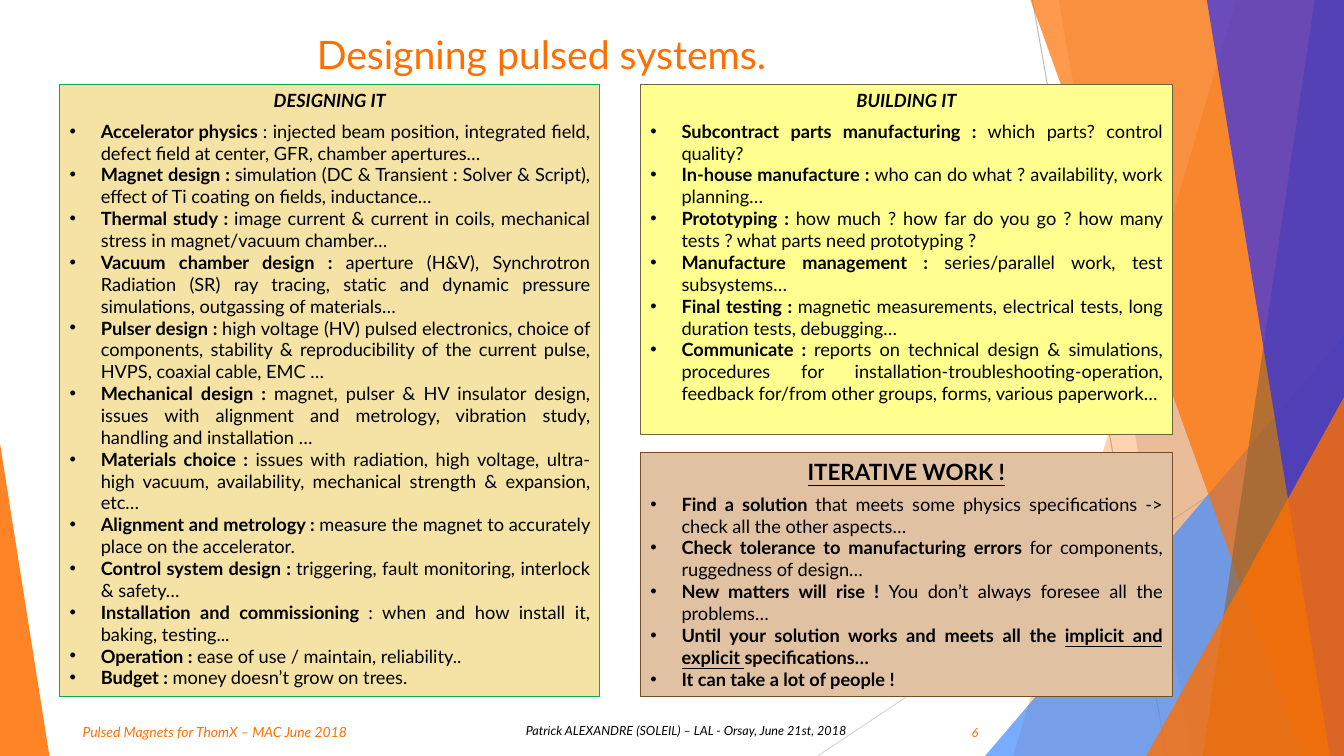
from lxml.etree import SubElement
from pptx import Presentation
from pptx.dml.color import RGBColor
from pptx.enum.shapes import MSO_CONNECTOR
from pptx.enum.text import MSO_ANCHOR as Anchor, MSO_AUTO_SIZE as AutoSize, PP_ALIGN as Align
from pptx.oxml.ns import qn
from pptx.util import Inches, Pt

ORANGE, BROWN, BLUE, INDIGO, BLACK = "FF6F00", "996633", "438CFF", "1F29FD", "000000"
WIDTH, HEIGHT = 13.33, 7.5
INDENT = Inches(0.31)


def color(value):
    return RGBColor.from_string(value)


def style(paragraph, size, font_color, align, **flags):
    paragraph.alignment = align
    paragraph.space_before = Pt(0)
    font = paragraph.font
    font.name, font.size, font.color.rgb = "Lato", Pt(size), color(font_color)
    for name, value in flags.items():
        setattr(font, name, value)


presentation = Presentation()
presentation.slide_width, presentation.slide_height = Inches(WIDTH), Inches(HEIGHT)
slide = presentation.slides.add_slide(presentation.slide_layouts.get_by_name("Comparison"))
shapes = slide.shapes
placeholders = list(slide.placeholders)

# Thin background lines
for x1, y1, x2, y2, line_color in [
    (8.11, HEIGHT, 13.32, 4.03, "D9D9D9"),
    (10.24, 0, 11.57, HEIGHT, "BFBFBF"),
]:
    line = shapes.add_connector(MSO_CONNECTOR.STRAIGHT, *map(Inches, (x1, y1, x2, y2)))
    line.line.color.rgb, line.line.width = color(line_color), Pt(0.75)
    SubElement(line.element.spPr, qn("a:effectLst"))

# Translucent facets: colour, opacity in percent, corners
top_right, bottom_right = (WIDTH, 0), (WIDTH, HEIGHT)
facets = [
    (ORANGE, 30, [(12.26, 0), (10.05, HEIGHT), bottom_right, top_right]),
    (BROWN, 20, [(10.5, 0), (11.82, HEIGHT), bottom_right, top_right]),
    (BLUE, 72, [(9.77, HEIGHT), (WIDTH, 3.33), bottom_right]),
    (ORANGE, 70, [(10.22, 0), (12.92, HEIGHT), bottom_right, top_right]),
    (BROWN, 70, [(13.04, 0), (11.93, HEIGHT), bottom_right, top_right]),
    (INDIGO, 65, [(11.97, 0), (13.19, HEIGHT), bottom_right, top_right]),
    (ORANGE, 80, [(11.37, HEIGHT), (WIDTH, 3.94), bottom_right]),
    (ORANGE, 85, [(0, 4.4), (0.49, HEIGHT), (0, HEIGHT)]),
]
for fill_color, opacity, corners in facets:
    points = [(Inches(x), Inches(y)) for x, y in corners]
    builder = shapes.build_freeform(*points[0])
    builder.add_line_segments(points[1:], close=True)
    facet = builder.convert_to_shape()
    facet.shadow.inherit = False
    facet.line.fill.background()
    facet.fill.solid()
    facet.fill.fore_color.rgb = color(fill_color)
    fill_element = facet.element.spPr.find(qn("a:solidFill")).find(qn("a:srgbClr"))
    SubElement(fill_element, qn("a:alpha"), val=str(opacity * 1000))

# Bring the placeholders in front of the background, drop the spare one
for placeholder in placeholders:
    shapes.element.append(placeholder.element)
title, *bodies, spare = placeholders
shapes.element.remove(spare.element)

# Footer
for text, left, top, width, height, size, text_color, align, anchor in [
    ("Pulsed Magnets for ThomX – MAC June 2018",
     0.72, 7.13, 3.32, 0.27, 10, ORANGE, Align.LEFT, Anchor.TOP),
    ("Patrick ALEXANDRE (SOLEIL) – LAL - Orsay, June 21st, 2018",
     4.68, 7.12, 3.81, 0.25, 9, BLACK, Align.RIGHT, Anchor.TOP),
    ("6", 9.19, 7.1, 0.61, 0.34, 9, ORANGE, Align.RIGHT, Anchor.MIDDLE),
]:
    frame = shapes.add_textbox(*map(Inches, (left, top, width, height))).text_frame
    frame.word_wrap, frame.vertical_anchor = True, anchor
    frame.text = text
    style(frame.paragraphs[0], size, text_color, align, italic=True)

# Title
title.left, title.top, title.width, title.height = map(Inches, (0.67, 0.25, 9.4, 0.76))
title.text_frame.text = "Designing pulsed systems."
title.text_frame.vertical_anchor = Anchor.TOP
title.text_frame.auto_size = AutoSize.NONE
style(title.text_frame.paragraphs[0], 28, ORANGE, Align.CENTER, bold=False)

# Panels: bold lead (underscores enclose underlined words), then plain detail
designing = [
    ("Accelerator physics ", ": injected beam position, integrated field, defect field at center, "
     "GFR, chamber apertures…"),
    ("Magnet design : ", "simulation (DC & Transient : Solver & Script), effect of Ti coating on "
     "fields, inductance…"),
    ("Thermal study : ", "image current & current in coils, mechanical stress in magnet/vacuum "
     "chamber…"),
    ("Vacuum chamber design : ", "aperture (H&V), Synchrotron Radiation (SR) ray tracing, static "
     "and dynamic pressure simulations, outgassing of materials…"),
    ("Pulser design : ", "high voltage (HV) pulsed electronics, choice of components, stability & "
     "reproducibility of the current pulse, HVPS, coaxial cable, EMC …"),
    ("Mechanical design : ", "magnet, pulser & HV insulator design, issues with alignment and "
     "metrology, vibration study, handling and installation …"),
    ("Materials choice : ", "issues with radiation, high voltage, ultra-high vacuum, availability, "
     "mechanical strength & expansion, etc…"),
    ("Alignment and metrology : ", "measure the magnet to accurately place on the accelerator."),
    ("Control system design : ", "triggering, fault monitoring, interlock & safety…"),
    ("Installation and commissioning ", ": when and how install it, baking, testing..."),
    ("Operation :", " ease of use / maintain, reliability.."),
    ("Budget :", " money doesn’t grow on trees."),
]
building = [
    ("Subcontract parts manufacturing : ", "which parts? control quality?"),
    ("In-house manufacture : ", "who can do what ? availability, work planning…"),
    ("Prototyping : ", "how much ? how far do you go ? how many tests ? what parts need "
     "prototyping ?"),
    ("Manufacture management : ", "series/parallel work, test subsystems…"),
    ("Final testing : ", "magnetic measurements, electrical tests, long duration tests, "
     "debugging…"),
    ("Communicate : ", "reports on technical design & simulations, procedures for "
     "installation-troubleshooting-operation, feedback for/from other groups, forms, various "
     "paperwork…"),
]
iterating = [
    ("Find a solution ", "that meets some physics specifications -> check all the other aspects…"),
    ("Check tolerance to manufacturing errors ", "for components, ruggedness of design…"),
    ("New matters will rise ! ", "You don’t always foresee all the problems…"),
    ("Until your solution works and meets all the _implicit and explicit _specifications…", ""),
    ("It can take a lot of people !", ""),
]
italic_heading = {"size": 13, "italic": True}
panels = [
    ("DESIGNING IT", italic_heading, designing, (0.59, 0.84, 5.36, 6.07), "F5E3A5", "00B050"),
    ("BUILDING IT", italic_heading, building, (6.35, 0.84, 5.28, 3.47), "FFFF8F", "6D6540"),
    ("ITERATIVE WORK !", {"size": 16, "underline": True}, iterating,
     (6.35, 4.49, 5.28, 2.42), "E0C2A3", "734D26"),
]
for panel, (heading, heading_style, items, bounds, fill_color, line_color) in zip(bodies, panels):
    panel.left, panel.top, panel.width, panel.height = map(Inches, bounds)
    panel.fill.solid()
    panel.fill.fore_color.rgb = color(fill_color)
    panel.line.color.rgb, panel.line.width = color(line_color), Pt(0.75)
    frame = panel.text_frame
    frame.vertical_anchor, frame.auto_size = Anchor.TOP, AutoSize.NONE

    frame.text = heading
    paragraph = frame.paragraphs[0]
    properties = paragraph._p.get_or_add_pPr()
    properties.set("marL", "0")
    properties.set("indent", "0")
    SubElement(properties, qn("a:buNone"))
    style(paragraph, font_color=BLACK, align=Align.CENTER, bold=True, **heading_style)
    paragraph.space_after = Pt(6)

    for lead, detail in items:
        paragraph = frame.add_paragraph()
        properties = paragraph._p.get_or_add_pPr()
        properties.set("marL", str(INDENT))
        properties.set("indent", str(-INDENT))
        SubElement(properties, qn("a:buFont"), typeface="Arial")
        SubElement(properties, qn("a:buChar"), char="•")
        style(paragraph, 13, BLACK, Align.JUSTIFY, bold=False)
        for position, words in enumerate(lead.split("_")):
            run = paragraph.add_run()
            run.text, run.font.bold = words, True
            if position % 2:
                run.font.underline = True
        if detail:
            paragraph.add_run().text = detail

presentation.save("out.pptx")
